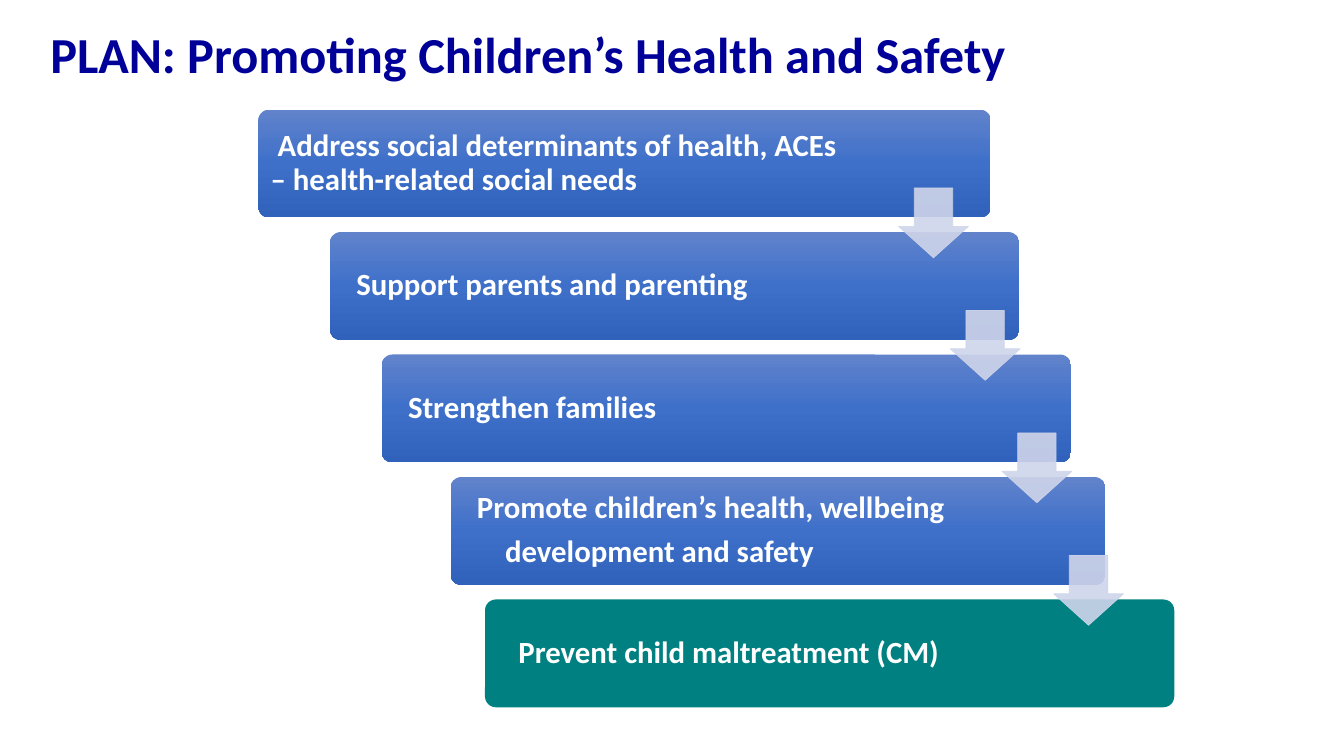
from lxml import etree
from pptx import Presentation
from pptx.dml.color import RGBColor
from pptx.enum.shapes import MSO_SHAPE
from pptx.enum.text import MSO_ANCHOR, PP_ALIGN
from pptx.oxml.ns import qn
from pptx.util import Inches, Pt

ROUND, ARROW = MSO_SHAPE.ROUNDED_RECTANGLE, MSO_SHAPE.DOWN_ARROW
MIDDLE, LEFT = MSO_ANCHOR.MIDDLE, PP_ALIGN.LEFT

THEME = {
    "font": "Calibri", "title": "000099", "text": "FFFFFF",
    "goal": "008080", "arrow": "CFD5EA",
    "blues": [(0, "6183CB"), (50, "3E70CA"), (100, "3062BB")],
    "title_size": 36, "text_size": 22,
}

deck = Presentation()
deck.slide_width, deck.slide_height = Inches(13.33), Inches(7.5)
slide = deck.slides.add_slide(deck.slide_layouts[6])
shapes = slide.shapes

# Grid: 78 columns, rows of 16.2 % of the height
COL = deck.slide_width / 78
ROW = deck.slide_height * 0.162
TOP = deck.slide_height * 0.145
SPACE = Inches(0.07)


def style(para, color, size):
    form = {"name": THEME["font"], "size": Pt(size), "bold": True}
    for key, value in form.items():
        setattr(para.font, key, value)
    para.font.color.rgb = RGBColor.from_string(color)


def add_part(kind, left, top, width, height, adjust):
    part = shapes.add_shape(kind, int(left), int(top), int(width), int(height))
    part.shadow.inherit = False
    for index, value in enumerate(adjust):
        part.adjustments[index] = value
    return part


# Steps: left column, width in columns, lines as (indent, text)
STEPS = [
    (15, 42.5, [(1, "Address social determinants of health, ACEs\v– health-related social needs")]),
    (19.15, 40, [(2, "Support parents and parenting")]),
    (22.15, 40, [(2, "Strengthen families")]),
    (26.15, 38, [(2, "Promote children’s health, wellbeing"),
                 (6, "development and safety")]),
    (28.15, 40, [(3, "Prevent child maltreatment (CM)")]),
]
FRAME = {"word_wrap": True, "vertical_anchor": MIDDLE}
FRAME.update({"margin_" + side: Inches(0.09)
              for side in ("left", "top", "right", "bottom")})
PARA = {"alignment": LEFT, "line_spacing": 0.9, "space_after": Pt(7.5)}

for row, (left, width, lines) in enumerate(STEPS):
    bar = add_part(ROUND, left * COL, TOP + row * ROW, width * COL, 0.88 * ROW, [0.1])
    bar.line.fill.background()

    # The last step is the goal, in a plain fill
    if row == len(STEPS) - 1:
        bar.fill.solid()
        bar.fill.fore_color.rgb = RGBColor.from_string(THEME["goal"])
    else:
        bar.fill.gradient()
        bar.fill.gradient_angle = 270
        stops = bar._element.spPr.find(".//" + qn("a:gsLst"))
        for stop in list(stops):
            stops.remove(stop)
        for share, color in THEME["blues"]:
            stop = etree.SubElement(stops, qn("a:gs"), pos=str(share * 1000))
            etree.SubElement(stop, qn("a:srgbClr"), val=color)

    # Text of the step
    frame = bar.text_frame
    for key, value in FRAME.items():
        setattr(frame, key, value)
    for index, (indent, text) in enumerate(lines):
        para = frame.add_paragraph() if index else frame.paragraphs[0]
        para.text = text
        for key, value in PARA.items():
            setattr(para, key, value)
        props = para._p.get_or_add_pPr()
        props.set("marL", "0")
        props.set("indent", str(indent * SPACE))
        style(para, THEME["text"], THEME["text_size"])

# Arrows from each step to the next
SIDE = 0.57 * ROW
for row in range(len(STEPS) - 1):
    arrow = add_part(ARROW, (52.15 + 3 * row) * COL, TOP + (row + 0.64) * ROW,
                     SIDE, SIDE, [0.55, 0.45])
    arrow.line.width = Pt(0.5)
    for fill in (arrow.fill, arrow.line.fill):
        fill.solid()
        fill.fore_color.rgb = RGBColor.from_string(THEME["arrow"])
    for color in arrow._element.spPr.iter(qn("a:srgbClr")):
        etree.SubElement(color, qn("a:alpha"), val="90000")

# Title
title = shapes.add_textbox(int(0.03 * deck.slide_width), int(0.02 * deck.slide_height),
                           int(0.94 * deck.slide_width), int(0.1 * deck.slide_height))
title.text_frame.word_wrap = True
title.text_frame.vertical_anchor = MIDDLE
head = title.text_frame.paragraphs[0]
head.text = "PLAN: Promoting Children’s Health and Safety"
style(head, THEME["title"], THEME["title_size"])

deck.save("out.pptx")
